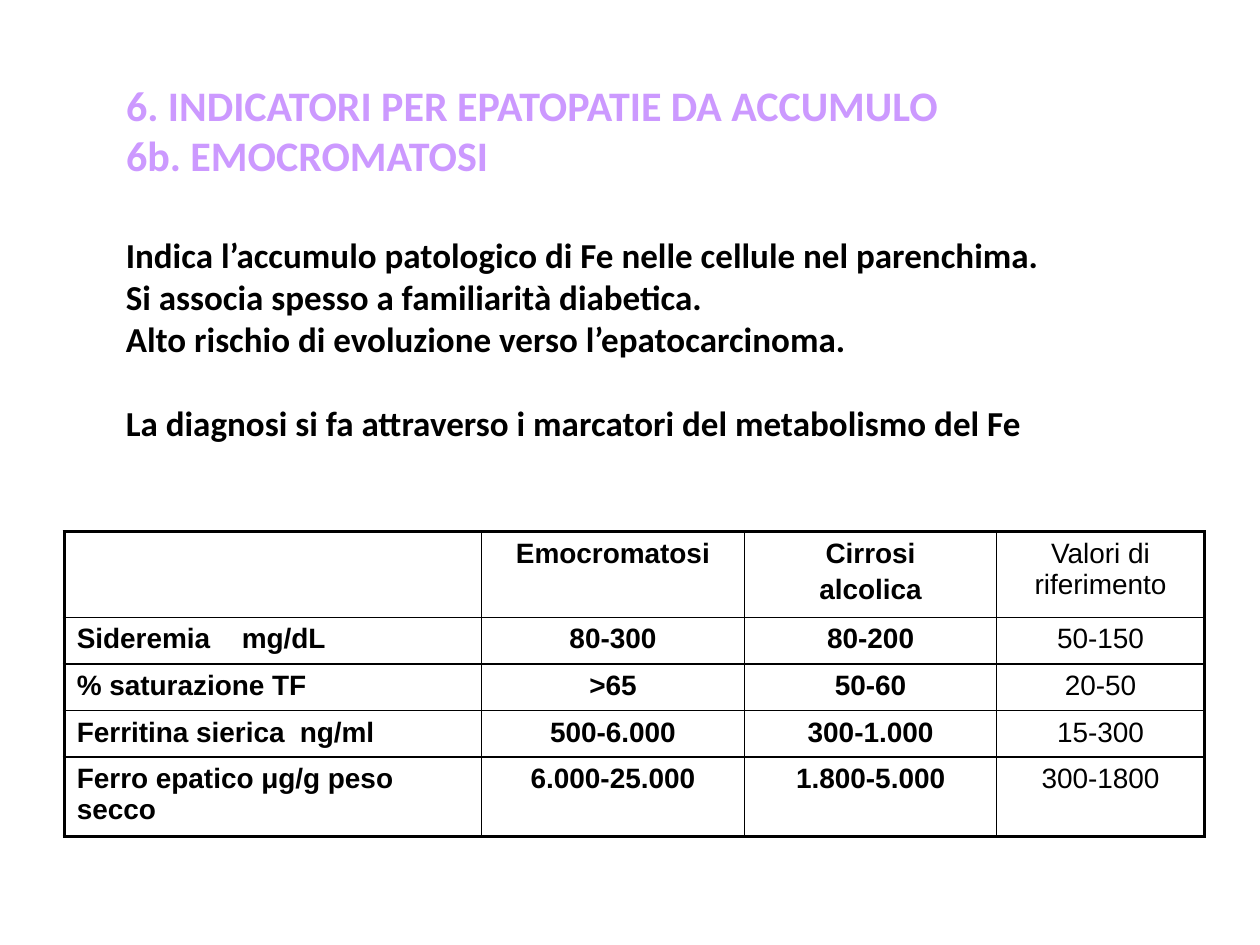
from lxml import etree
from pptx import Presentation
from pptx.dml.color import RGBColor
from pptx.enum import text
from pptx.oxml.ns import qn
from pptx.util import Inches, Pt

BLACK, LILAC = "000000", "CC99FF"

TITLE = ["6. INDICATORI PER EPATOPATIE DA ACCUMULO", "6b. EMOCROMATOSI"]
FACTS = [
    "Indica l’accumulo patologico di Fe nelle cellule nel parenchima.",
    "Si associa spesso a familiarità diabetica.",
    "Alto rischio di evoluzione verso l’epatocarcinoma.",
]
DIAGNOSIS = "La diagnosi si fa attraverso i marcatori del metabolismo del Fe"
MARKERS = [
    ("", "Emocromatosi", "Cirrosi\nalcolica", "Valori di riferimento"),
    ("Sideremia\tmg/dL", "80-300", "80-200", "50-150"),
    ("% saturazione TF", ">65", "50-60", "20-50"),
    ("Ferritina sierica\tng/ml", "500-6.000", "300-1.000", "15-300"),
    ("Ferro epatico μg/g peso secco", "6.000-25.000", "1.800-5.000", "300-1800"),
]
UNIT_TABS = {1: 1.31, 3: 1.77}  # row: where its unit starts, in inches
COLUMN_WIDTHS = [3.31, 2.09, 2, 1.65]
ROW_HEIGHTS = [0.68, 0.37, 0.37, 0.37, 0.63]
OUTER_LINE, INNER_LINE = 2.25, 1


def color(value):
    return RGBColor.from_string(value)


def write(paragraph, words, font, size, fill=BLACK, bold=True):
    run = paragraph.add_run()
    run.text = words
    run.font.name, run.font.size, run.font.bold = font, Pt(size), bold
    run.font.color.rgb = color(fill)


def write_lines(frame, lines, **style):
    """Write one paragraph per line and return the paragraphs."""
    paragraphs = [frame.paragraphs[0]] + [frame.add_paragraph() for _ in lines[1:]]
    for paragraph, line in zip(paragraphs, lines):
        paragraph.alignment = text.PP_ALIGN.LEFT
        write(paragraph, line, **style)
    return paragraphs


def place(shape, left, top, width, height):
    shape.left, shape.top = Inches(left), Inches(top)
    shape.width, shape.height = Inches(width), Inches(height)
    frame = shape.text_frame
    frame.word_wrap = True
    frame.auto_size = text.MSO_AUTO_SIZE.NONE
    frame.vertical_anchor = text.MSO_ANCHOR.TOP
    return frame


def add_tab(paragraph, position):
    tabs = etree.SubElement(paragraph._p.get_or_add_pPr(), qn("a:tabLst"))
    etree.SubElement(tabs, qn("a:tab"), pos=str(Inches(position)), algn="l")


def set_borders(cell, widths):
    """Draw the cell's sides, given as points in the order L, R, T, B."""
    properties = cell._tc.get_or_add_tcPr()
    for index, (side, width) in enumerate(zip("LRTB", widths)):
        line = etree.Element(qn(f"a:ln{side}"), w=str(Pt(width)))
        fill = etree.SubElement(line, qn("a:solidFill"))
        etree.SubElement(fill, qn("a:srgbClr"), val=BLACK)
        properties.insert(index, line)


def add_markers(slide):
    rows, columns = len(MARKERS), len(COLUMN_WIDTHS)
    table = slide.shapes.add_table(
        rows, columns, Inches(0.51), Inches(4.22),
        Inches(sum(COLUMN_WIDTHS)), Inches(sum(ROW_HEIGHTS))).table
    table.first_row = table.horz_banding = False
    for column, width in zip(table.columns, COLUMN_WIDTHS):
        column.width = Inches(width)
    for row, height in zip(table.rows, ROW_HEIGHTS):
        row.height = Inches(height)

    for r, values in enumerate(MARKERS):
        for c, value in enumerate(values):
            cell = table.cell(r, c)
            cell.fill.background()
            at_edge = (c == 0, c == columns - 1, r == 0, r == rows - 1)
            set_borders(cell, [OUTER_LINE if edge else INNER_LINE for edge in at_edge])
            if not value:
                continue
            paragraphs = write_lines(cell.text_frame, value.split("\n"),
                                     font="Arial", size=16, bold=c < columns - 1)
            for paragraph in paragraphs[1:]:
                paragraph.space_before = Pt(3.2)
            if c > 0:
                for paragraph in paragraphs:
                    paragraph.alignment = text.PP_ALIGN.CENTER
            elif r in UNIT_TABS:
                add_tab(paragraphs[0], UNIT_TABS[r])


def main():
    deck = Presentation()
    deck.slide_width, deck.slide_height = Inches(10), Inches(7.5)
    slide = deck.slides.add_slide(deck.slide_layouts[5])

    title = place(slide.shapes.title, 0.9, 0.58, 8.58, 0.92)
    write_lines(title, TITLE, font="Calibri", size=24, fill=LILAC)

    body = place(slide.shapes.add_textbox(0, 0, 0, 0), 0.9, 1.8, 8.58, 2.08)
    paragraphs = write_lines(body, FACTS + [DIAGNOSIS], font="Calibri", size=20)
    paragraphs[-1].space_before = Pt(24.4)

    add_markers(slide)
    deck.save("out.pptx")


if __name__ == "__main__":
    main()
